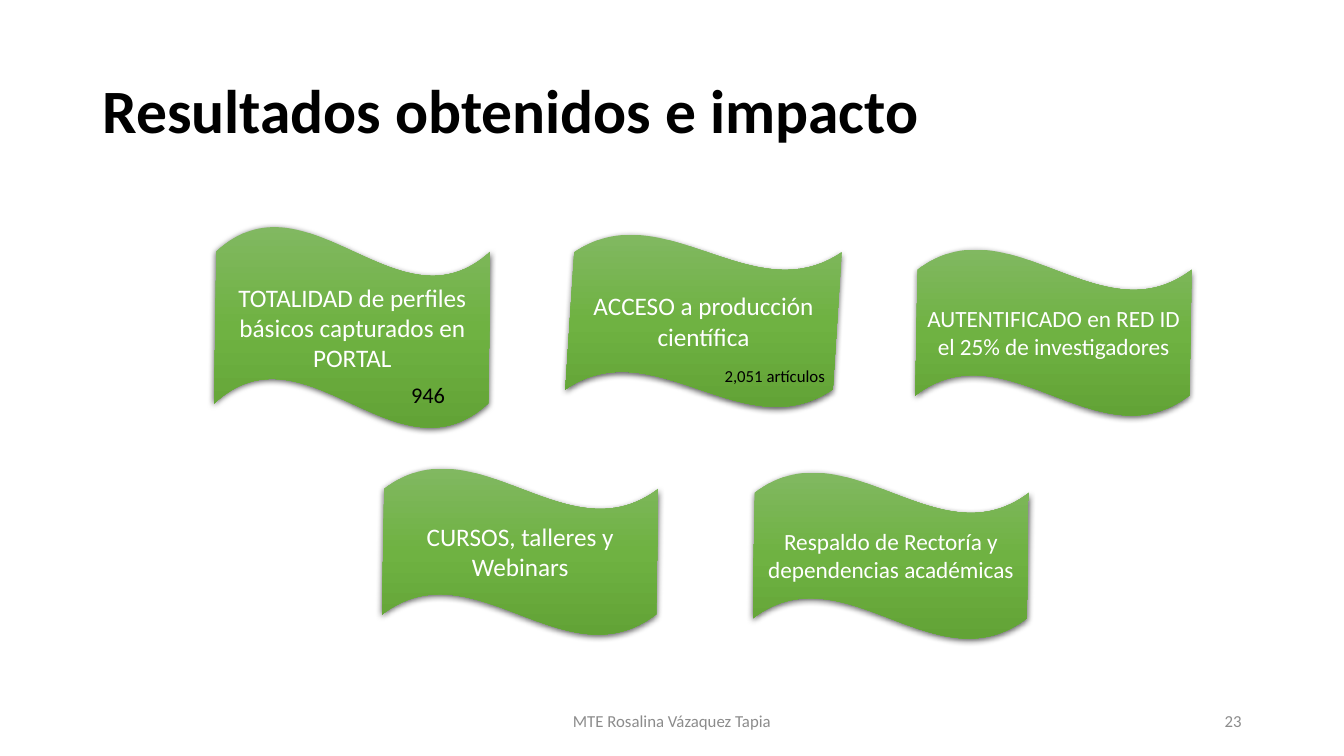
"""Build the slide of results and impact with five green waves."""
from dataclasses import dataclass

from pptx import Presentation
from pptx.dml.color import RGBColor as RGB
from pptx.enum.shapes import MSO_SHAPE as SHAPE
from pptx.enum.text import MSO_ANCHOR as ANCHOR, PP_ALIGN as ALIGN
from pptx.oxml import parse_xml
from pptx.oxml.ns import nsdecls
from pptx.util import Cm, Pt


@dataclass(frozen=True)
class Theme:
    font: str = "Calibri"
    black: str = "000000"
    white: str = "FFFFFF"
    grey: str = "8C8C8C"
    greens: tuple = ((0, "81B861"), (50, "6FB242"), (100, "62A336"))
    title: float = 44
    body: float = 18
    compact: float = 16.6
    figure: float = 16
    small: float = 12


THEME = Theme()
WAVE_W = 6.96
WAVE_H = 4.22
WAVE_BEND = (0.125, -0.004)


def write(sp, text, size, color, align, anchor, bold=False):
    tf = sp.text_frame
    tf.word_wrap = True
    tf.vertical_anchor = anchor
    p = tf.paragraphs[0]
    p.text = text
    p.alignment = align
    p.font.name = THEME.font
    p.font.size = Pt(size)
    p.font.bold = bold
    p.font.color.rgb = RGB.from_string(color)
    return p


def add_label(s, box, text, size, color, align=ALIGN.LEFT, anchor=ANCHOR.MIDDLE, bold=False):
    sp = s.shapes.add_textbox(*(Cm(v) for v in box))
    return write(sp, text, size, color, align, anchor, bold)


def paint_wave(sp):
    sp.line.fill.background()
    stops = "".join(
        f'<a:gs pos="{pos * 1000}"><a:srgbClr val="{color}"/></a:gs>'
        for pos, color in THEME.greens
    )
    gradient = parse_xml(
        f'<a:gradFill {nsdecls("a")} rotWithShape="1"><a:gsLst>{stops}</a:gsLst>'
        '<a:lin ang="5400000" scaled="0"/></a:gradFill>'
    )
    shadow = parse_xml(
        f'<a:effectLst {nsdecls("a")}><a:outerShdw blurRad="{Pt(4.5)}" dist="{Pt(1.5)}"'
        f' dir="5400000" algn="ctr" rotWithShape="0"><a:srgbClr val="{THEME.black}">'
        '<a:alpha val="63000"/></a:srgbClr></a:outerShdw></a:effectLst>'
    )
    line = sp.line._get_or_add_ln()
    line.addprevious(gradient)
    line.addnext(shadow)


def add_wave(s, left, top, text, size=THEME.body, height=WAVE_H, bend=WAVE_BEND):
    sp = s.shapes.add_shape(SHAPE.WAVE, Cm(left), Cm(top), Cm(WAVE_W), Cm(height))
    for i, value in enumerate(bend):
        sp.adjustments[i] = value
    paint_wave(sp)
    tf = sp.text_frame
    tf.margin_left = tf.margin_right = Cm(0.17)
    write(sp, text, size, THEME.white, ALIGN.CENTER, ANCHOR.MIDDLE)


def main():
    prs = Presentation()
    prs.slide_width, prs.slide_height = Cm(33.87), Cm(19.05)
    s = prs.slides.add_slide(prs.slide_layouts[6])

    title = add_label(s, (2.33, 1.01, 29.21, 3.68), "Resultados obtenidos e impacto",
                      THEME.title, THEME.black, bold=True)
    title.line_spacing = 0.9
    add_label(s, (11.22, 17.66, 11.43, 1.01), "MTE Rosalina Vázaquez Tapia",
              THEME.small, THEME.grey, ALIGN.CENTER)
    add_label(s, (23.92, 17.66, 7.62, 1.01), "23", THEME.small, THEME.grey, ALIGN.RIGHT)

    add_wave(s, 5.4, 5.7, "TOTALIDAD de perfiles básicos capturados en PORTAL", height=5.1)
    add_wave(s, 14.25, 5.9, "ACCESO a producción científica", height=4.37,
             bend=(0.105, -0.016))
    add_wave(s, 23.07, 6.27, "AUTENTIFICADO en RED ID el 25% de investigadores", THEME.compact)
    add_wave(s, 9.63, 11.79, "CURSOS, talleres y Webinars")
    add_wave(s, 18.97, 11.89, "Respaldo de Rectoría y dependencias académicas", THEME.compact)

    add_label(s, (10.11, 9.47, 1.88, 0.94), "946", THEME.figure, THEME.black,
              anchor=ANCHOR.TOP)
    add_label(s, (18.01, 9.09, 5.97, 0.76), "2,051 artículos", THEME.small, THEME.black,
              anchor=ANCHOR.TOP)
    prs.save("out.pptx")


if __name__ == "__main__":
    main()
